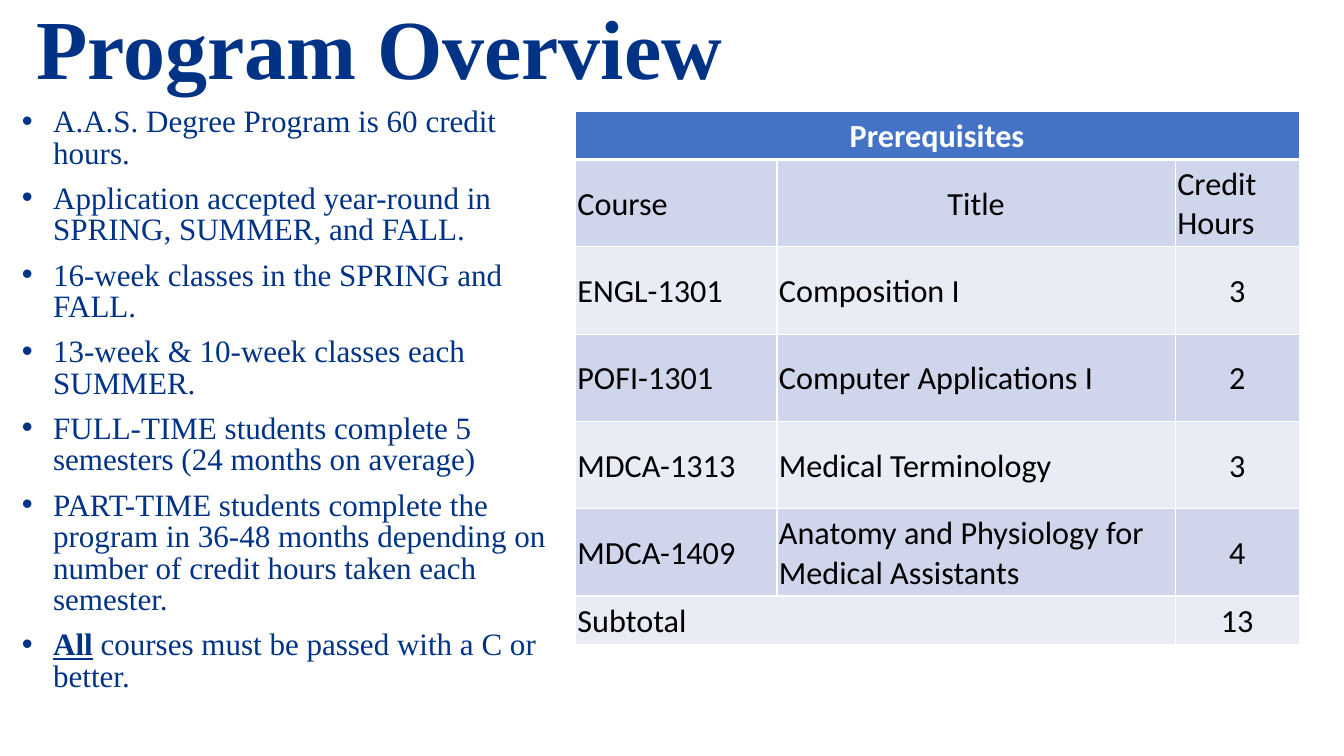
from lxml import etree
from pptx import Presentation
from pptx.dml.color import RGBColor
from pptx.enum import text
from pptx.oxml.ns import qn
from pptx.util import Cm, Pt

NAVY, WHITE, BLACK = "003385", "FFFFFF", "000000"
HEADER_BLUE, DARK_BAND, LIGHT_BAND = "4472C4", "CFD5EA", "E9EBF5"


def color(hex_code):
    return RGBColor.from_string(hex_code)


def add_borders(cell, bottom_width, top_width):
    """Draw white lines on all four sides, widths in points."""
    properties = cell._tc.get_or_add_tcPr()
    widths = {"lnL": 1, "lnR": 1, "lnT": top_width, "lnB": bottom_width}
    for position, (side, width) in enumerate(widths.items()):
        line = etree.Element(qn(f"a:{side}"), w=str(Pt(width)))
        fill = etree.SubElement(line, qn("a:solidFill"))
        etree.SubElement(fill, qn("a:srgbClr"), val=WHITE)
        properties.insert(position, line)


prs = Presentation()
prs.slide_width, prs.slide_height = Cm(33.87), Cm(19.05)
slide = prs.slides.add_slide(prs.slide_layouts[6])

# Title
title = slide.shapes.add_textbox(Cm(0.66), Cm(0.05), Cm(20.19), Cm(2.54)).text_frame
title.word_wrap = True
title.vertical_anchor = text.MSO_ANCHOR.BOTTOM
heading = title.paragraphs[0]
heading.text = "Program Overview"
heading.line_spacing = 0.9
heading.font.name, heading.font.size, heading.font.bold = "Times New Roman", Pt(60), True
heading.font.color.rgb = color(NAVY)

# Program facts; each is a bold underlined lead and the rest
facts = [
    ("", "A.A.S. Degree Program is 60 credit hours."),
    ("", "Application accepted year-round in SPRING, SUMMER, and FALL."),
    ("", "16-week classes in the SPRING and FALL."),
    ("", "13-week & 10-week classes each SUMMER."),
    ("", "FULL-TIME students complete 5 semesters (24 months on average)"),
    ("", "PART-TIME students complete the program in 36-48 months depending on "
         "number of credit hours taken each semester."),
    ("All", " courses must be passed with a C or better."),
]
overview = slide.shapes.add_textbox(Cm(0.3), Cm(2.59), Cm(14.1), Cm(15.11)).text_frame
overview.word_wrap = True
for number, (lead, rest) in enumerate(facts):
    fact = overview.add_paragraph() if number else overview.paragraphs[0]
    indent = fact._p.get_or_add_pPr()
    indent.set("marL", str(Cm(0.79)))
    indent.set("indent", str(-Cm(0.79)))
    fact.line_spacing = 0.84
    if number:
        fact.space_before = Pt(10)
    etree.SubElement(indent, qn("a:buFont"), typeface="Arial")
    etree.SubElement(indent, qn("a:buChar"), char="•")
    fact.font.name, fact.font.size = "Times New Roman", Pt(22.2)
    fact.font.color.rgb = color(NAVY)
    if lead:
        emphasis = fact.add_run()
        emphasis.text = lead
        emphasis.font.bold = emphasis.font.underline = True
    fact.add_run().text = rest

# Prerequisite courses
courses = [
    ("Prerequisites", "", ""),
    ("Course", "Title", "Credit Hours"),
    ("ENGL-1301", "Composition I", "3"),
    ("POFI-1301", "Computer Applications I", "2"),
    ("MDCA-1313", "Medical Terminology", "3"),
    ("MDCA-1409", "Anatomy and Physiology for Medical Assistants", "4"),
    ("Subtotal", "", "13"),
]
column_widths = [5.08, 10.04, 3.12]
row_heights = [1.22] + [2.2] * 5 + [1.22]
prerequisites = slide.shapes.add_table(
    len(courses), len(column_widths), Cm(14.5), Cm(2.8),
    Cm(sum(column_widths)), Cm(sum(row_heights))).table
for column, width in zip(prerequisites.columns, column_widths):
    column.width = Cm(width)
for row, height in zip(prerequisites.rows, row_heights):
    row.height = Cm(height)
prerequisites.cell(0, 0).merge(prerequisites.cell(0, 2))
prerequisites.cell(6, 0).merge(prerequisites.cell(6, 1))

centered = {(0, 0), (1, 1)} | {(row, 2) for row in range(2, 7)}
for r, course in enumerate(courses):
    band = HEADER_BLUE if r == 0 else DARK_BAND if r % 2 else LIGHT_BAND
    for c, value in enumerate(course):
        cell = prerequisites.cell(r, c)
        cell.fill.solid()
        cell.fill.fore_color.rgb = color(band)
        add_borders(cell, 3 if r == 0 else 1, 3 if r == 1 else 1)
        cell.vertical_anchor = text.MSO_ANCHOR.MIDDLE
        cell.margin_left = cell.margin_right = cell.margin_top = Cm(0.05)
        cell.margin_bottom = 0
        entry = cell.text_frame.paragraphs[0]
        entry.text = value
        entry.alignment = text.PP_ALIGN.CENTER if (r, c) in centered else text.PP_ALIGN.LEFT
        entry.font.name, entry.font.size, entry.font.bold = "Calibri", Pt(23), r == 0
        entry.font.color.rgb = color(BLACK if r else WHITE)

prs.save("out.pptx")
